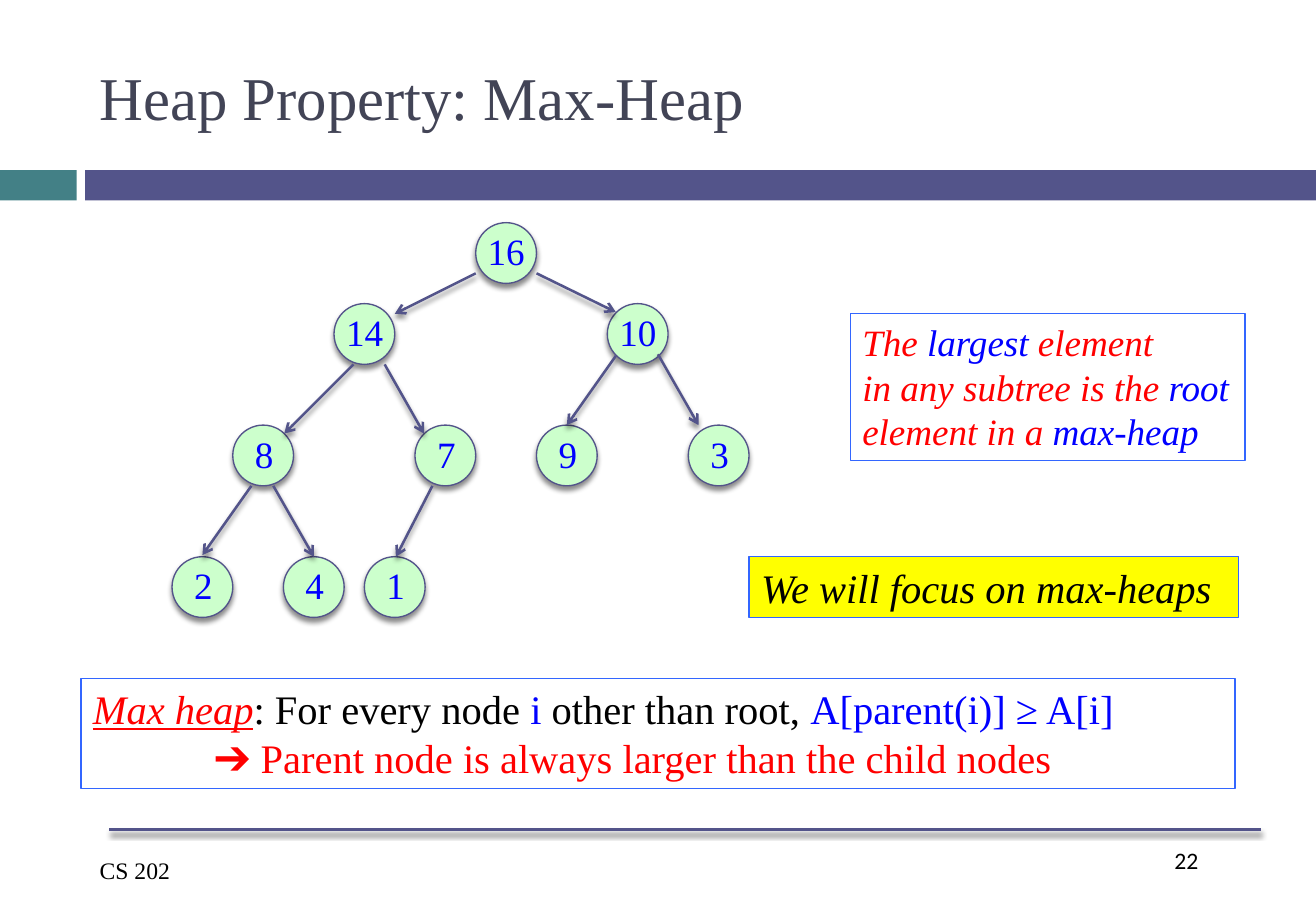
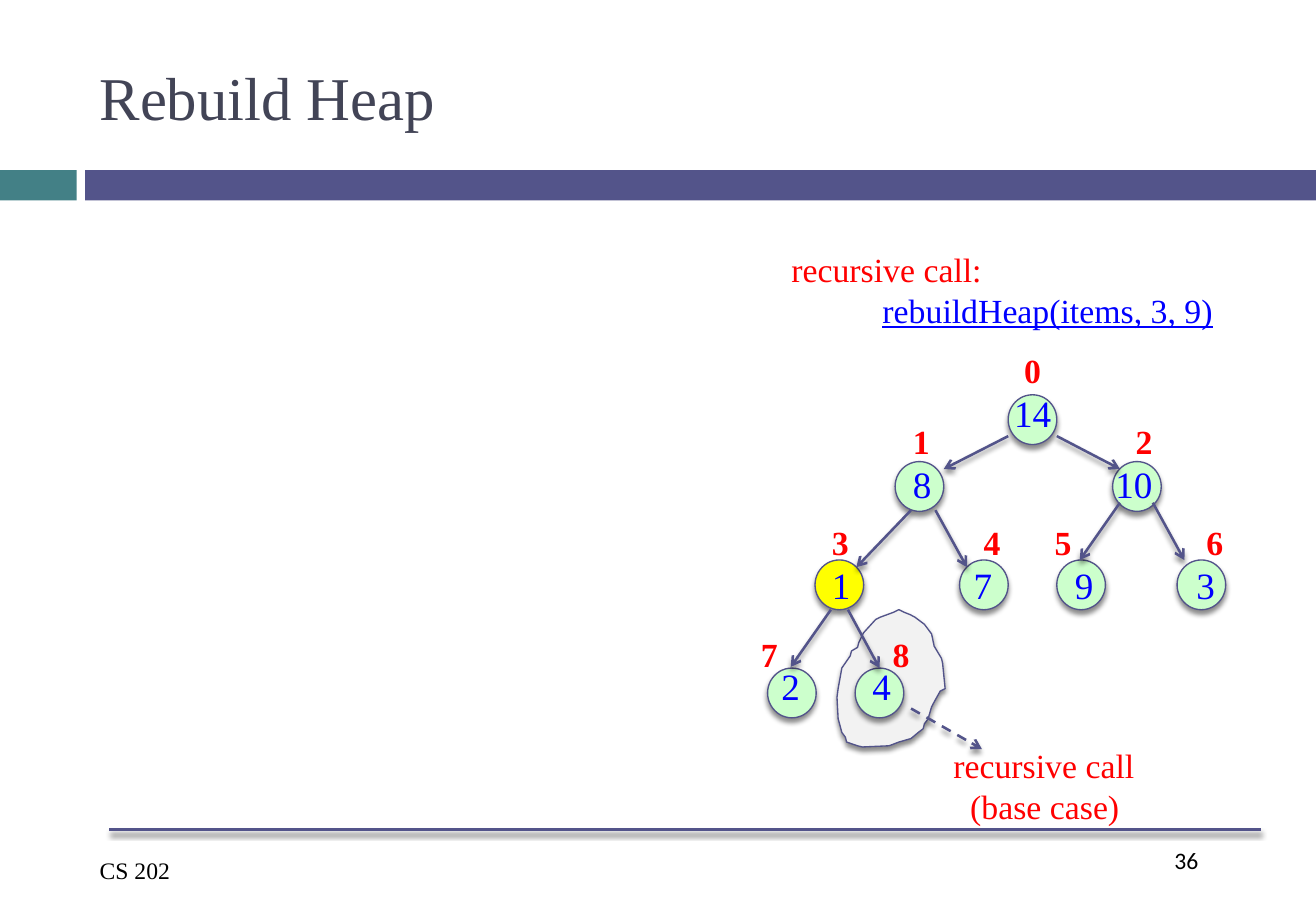
"""Builds two lecture slides on heaps with python-pptx."""
from dataclasses import dataclass

from lxml import etree
from pptx import Presentation
from pptx.dml.color import RGBColor
from pptx.enum.dml import MSO_LINE
from pptx.enum.shapes import MSO_CONNECTOR, MSO_SHAPE
from pptx.enum.text import MSO_ANCHOR
from pptx.oxml.ns import qn
from pptx.util import Pt

RECT = MSO_SHAPE.RECTANGLE
OVAL = MSO_SHAPE.OVAL
STRAIGHT = MSO_CONNECTOR.STRAIGHT
DASH = MSO_LINE.DASH
TOP = MSO_ANCHOR.TOP
MIDDLE = MSO_ANCHOR.MIDDLE


@dataclass(frozen=True)
class Theme:
    """Colours, fonts and type sizes of the deck."""
    indigo: str = "53548A"
    teal: str = "438086"
    title: str = "424456"
    black: str = "000000"
    red: str = "FF0000"
    blue: str = "0000FF"
    yellow: str = "FFFF00"
    green: str = "CCFFCC"
    grey: str = "F2F2F2"
    frame: str = "3366FF"
    serif: str = "Times New Roman"
    sans: str = "Calibri"
    title_size: int = 36
    large: int = 24
    body: int = 22
    small: int = 20
    footer: int = 14
    outline: float = 0.79
    frame_line: float = 0.75
    arrow_line: float = 1.5


T = Theme()


def rgb(value):
    """Turn a hex string into a colour."""
    return RGBColor.from_string(value)


class Deck:
    """Holds the style, the presentation and the current slide."""

    def __init__(self):
        """Open an empty deck of 780 by 540 points."""
        self.prs = Presentation()
        self.prs.slide_width, self.prs.slide_height = Pt(780), Pt(540)
        self.s = None

    def slide(self, title, number):
        """Add a slide with bands, title, rule and footer."""
        self.s = self.prs.slides.add_slide(self.prs.slide_layouts[6])
        self.band(0, 45.4, T.teal)
        self.band(50.4, 729.6, T.indigo)
        self.text(689, 498, 58, 36, [[(number, T.black)]], T.footer, font=T.sans)
        self.line(64.8, 491.8, 747.4, 491.8)
        self.text(52, 504, 143, 24.5, [[("CS 202", T.black)]], T.footer)
        self.text(52, 18, 695.5, 78, [[(title, T.title)]], T.title_size, anchor=MIDDLE)

    def band(self, x, w, color):
        """Draw one part of the band under the title."""
        sp = self.s.shapes.add_shape(RECT, Pt(x), Pt(100.8), Pt(w), Pt(18))
        sp.fill.solid()
        sp.fill.fore_color.rgb = rgb(color)
        sp.line.fill.background()
        sp.shadow.inherit = False

    def text(self, x, y, w, h, lines, size, wrap=True, indents=(), font=T.serif,
             anchor=TOP, fill=None, frame=None):
        """Add lines of runs, each run a text, a colour and style letters."""
        sp = self.s.shapes.add_textbox(Pt(x), Pt(y), Pt(w), Pt(h))
        tf = sp.text_frame
        tf.word_wrap, tf.vertical_anchor = wrap, anchor
        for i, runs in enumerate(lines):
            p = tf.add_paragraph() if i else tf.paragraphs[0]
            if i < len(indents) and indents[i]:
                p._p.get_or_add_pPr().set("marL", str(Pt(indents[i])))
            for words, color, *style in runs:
                r = p.add_run()
                r.text = words
                f = r.font
                f.name, f.size, f.color.rgb = font, Pt(size), rgb(color)
                f.bold, f.italic, f.underline = (c in "".join(style) for c in "biu")
        if fill:
            sp.fill.solid()
            sp.fill.fore_color.rgb = rgb(fill)
        if frame:
            sp.line.color.rgb, sp.line.width = rgb(frame), Pt(T.frame_line)
        return sp

    def shadow(self, sp):
        """Give a shape or connector the soft shadow below it."""
        effects = etree.SubElement(sp.element.spPr, qn("a:effectLst"))
        outer = etree.SubElement(effects, qn("a:outerShdw"), blurRad=str(Pt(3)),
                                 dist=str(Pt(2.4)), dir="5400000", rotWithShape="0")
        color = etree.SubElement(outer, qn("a:srgbClr"), val=T.black)
        etree.SubElement(color, qn("a:alpha"), val="45000")

    def outline(self, sp, fill):
        """Fill and outline a diagram shape."""
        sp.fill.solid()
        sp.fill.fore_color.rgb = rgb(fill)
        sp.line.color.rgb, sp.line.width = rgb(T.indigo), Pt(T.outline)
        self.shadow(sp)
        return sp

    def node(self, x, y, w, h, fill=T.green):
        """Draw the circle of a tree node."""
        return self.outline(self.s.shapes.add_shape(OVAL, Pt(x), Pt(y), Pt(w), Pt(h)), fill)

    def value(self, words, x, y):
        """Write the value of a tree node."""
        w = 36.7 if len(words) > 1 else 25.9
        return self.text(x, y, w, 33.8, [[(words, T.blue)]], T.body, wrap=False)

    def line(self, x1, y1, x2, y2, arrow=False, dash=None):
        """Draw a straight line, with an arrowhead if asked."""
        c = self.s.shapes.add_connector(STRAIGHT, Pt(x1), Pt(y1), Pt(x2), Pt(y2))
        c.line.color.rgb, c.line.width = rgb(T.indigo), Pt(T.arrow_line)
        if dash:
            c.line.dash_style = dash
        if arrow:
            etree.SubElement(c.get_or_add_ln(), qn("a:tailEnd"), type="arrow")
        self.shadow(c)

    def arrows(self, ends):
        """Draw the edges of a tree."""
        for end in ends:
            self.line(*end, arrow=True)

    def region(self, points, fill):
        """Draw a closed outline through the points."""
        points = [(x * 10, y * 10) for x, y in points]
        builder = self.s.shapes.build_freeform(*points[0], scale=Pt(0.1))
        builder.add_line_segments(points[1:], close=True)
        self.outline(builder.convert_to_shape(), fill)


def max_heap(deck):
    """Build the slide on the max-heap property."""
    deck.slide("Heap Property: Max-Heap", "22")
    nodes = [("16", 282, 132), ("14", 198, 180), ("10", 360, 180), ("8", 138, 252),
             ("2", 102, 330), ("7", 246, 252), ("4", 168, 330), ("1", 216, 330),
             ("9", 318, 252), ("3", 408, 252)]
    for words, x, y in nodes:
        inset = 0 if len(words) > 1 else 6
        pair = [deck.node(x, y, 36, 36), deck.value(words, x + inset, y)]
        deck.s.shapes.add_group_shape(pair)
    deck.arrows([
        (282, 162, 234, 186), (318, 162, 365, 185), (209.5, 216, 168.5, 257),
        (228, 216, 251.3, 257), (365, 211, 336, 252), (390, 210, 414, 252),
        (149, 288, 120, 329), (162, 288, 186, 330), (256.3, 288, 234.7, 330)])
    deck.text(48, 402, 684, 65.5, [
        [("Max heap", T.red, "iu"), (": For every node ", T.black), ("i", T.blue),
         (" other than root, ", T.black), ("A[parent(i)] ≥ A[i]", T.blue)],
        [("➔ Parent node is always larger than the child nodes", T.red)],
    ], T.large, indents=(0, 72), frame=T.frame)
    deck.text(504, 186, 234, 87, [
        [("The ", T.red, "i"), ("largest ", T.blue, "i"), ("element", T.red, "i")],
        [("in any subtree is the ", T.red, "i"), ("root", T.blue, "i"),
         (" element in a ", T.red, "i"), ("max-heap", T.blue, "i")],
    ], T.body, frame=T.frame)
    deck.text(444, 330, 290, 36, [[("We will focus on max-heaps", T.black, "i")]],
              T.large, fill=T.yellow, frame=T.frame)


def rebuild_heap(deck):
    """Build the slide on the recursive rebuild."""
    deck.slide("Rebuild Heap", "36")
    deck.region([
        (529.9, 362.9), (522, 365.8), (519.1, 367.2), (511.9, 375.1), (509, 380.9),
        (508.3, 383.8), (504.7, 385.9), (504, 388.8), (499, 396), (496.8, 408.2),
        (496.1, 413.3), (496.8, 426), (499, 434.2), (501.1, 437), (501.8, 439.9),
        (508.3, 442.1), (511.2, 442.8), (527, 442.1), (532.8, 439.9), (540, 437.8),
        (544.3, 434.2), (547.2, 432), (547.9, 429.1), (550.1, 426.2), (552.2, 419),
        (553.7, 416.2), (557.3, 409.7), (560.2, 408.2), (558.7, 393.1), (558, 390.2),
        (553.7, 383), (552.2, 375.8), (547.9, 370.1), (542.2, 365.8), (539.3, 364.3),
        (535.7, 362.9), (532.8, 361.4)], T.grey)
    nodes = [(597.6, 234), (530.6, 273.6), (659.5, 273.6), (483.1, 331.9), (568.8, 331.9),
             (626.4, 331.9), (697.7, 331.9), (455, 396), (506.9, 396)]
    for i, (x, y) in enumerate(nodes):
        deck.node(x, y, 28.8, 29.5, T.yellow if i == 3 else T.green)
    deck.arrows([
        (597.6, 258.5, 559.4, 278), (626.4, 258.5, 663.8, 278), (540, 302.4, 507.6, 336.2),
        (554.4, 302.4, 573.1, 336.2), (663.8, 298, 640, 332), (683.3, 298, 702, 332),
        (492.5, 361.4, 468.7, 395.3), (502.6, 361.4, 521.3, 396)])
    deck.line(540, 420, 582, 444, arrow=True, dash=DASH)
    values = [("14", 594, 228), ("8", 534, 270), ("10", 654, 270), ("1", 486, 330),
              ("7", 570, 330), ("9", 630, 330), ("3", 702, 330), ("2", 456, 390),
              ("4", 510, 390)]
    for value in values:
        deck.value(*value)
    indexes = [(600, 204), (534, 246), (666, 246), (486, 306), (576, 306), (618, 306),
               (708, 306), (444, 372), (522, 372)]
    for i, (x, y) in enumerate(indexes):
        deck.text(x, y, 24.5, 31.7, [[(str(i), T.red, "b")]], T.small, wrap=False)
    deck.text(462, 144, 128, 31.7, [[("recursive call:", T.red)]], T.small, wrap=False)
    deck.text(516, 168, 211.7, 31.7, [[("rebuildHeap(items, 3, 9)", T.blue, "u")]],
              T.small, wrap=False)
    deck.text(558, 438, 122.4, 55.4, [[("recursive call", T.red)], [("(base case)", T.red)]],
              T.small, wrap=False, indents=(0, 10))


def main():
    """Build and save the deck."""
    deck = Deck()
    max_heap(deck)
    rebuild_heap(deck)
    deck.prs.save("out.pptx")


if __name__ == "__main__":
    main()
